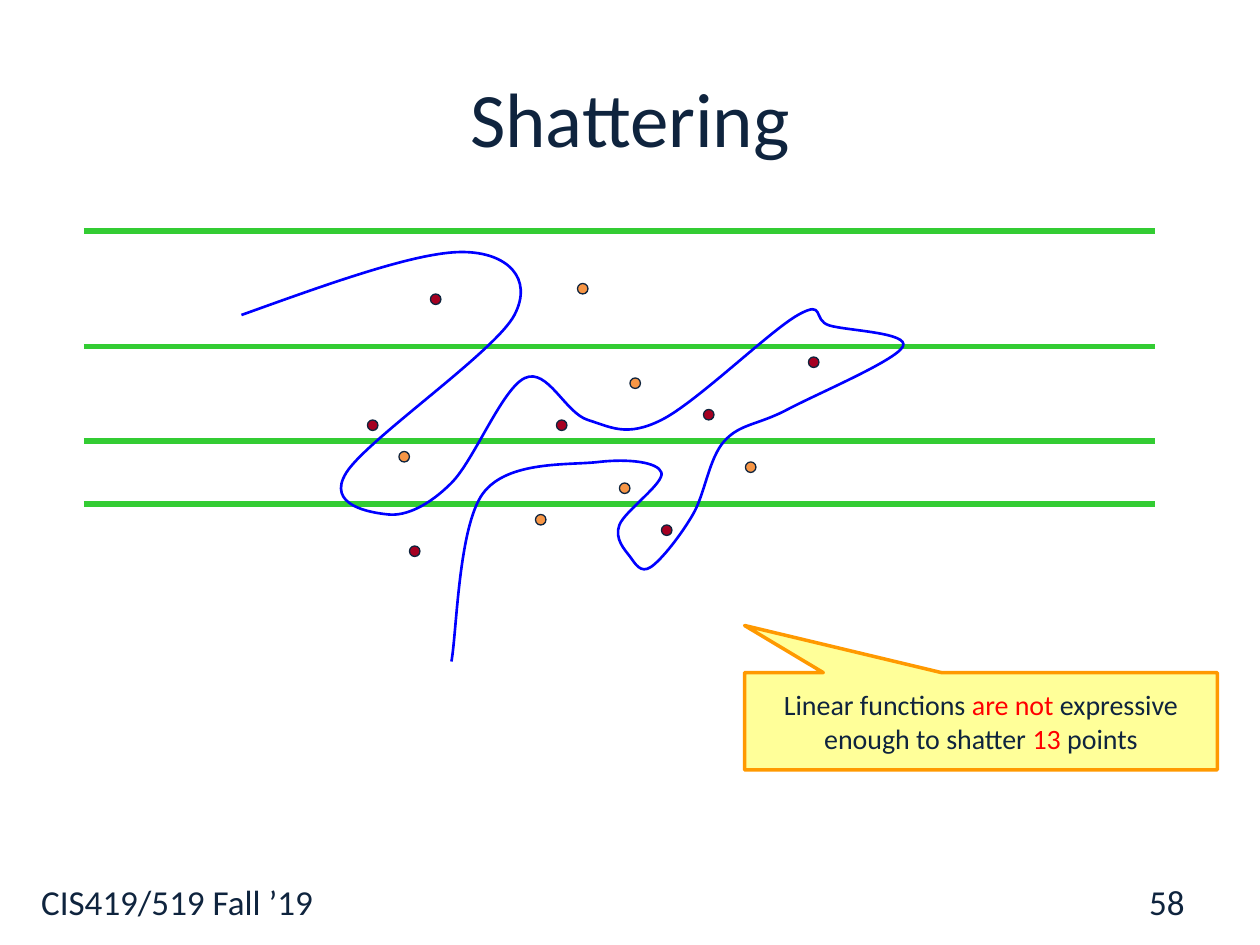
"""Build the slide on shattering thirteen points with a curve and parallel lines."""
from itertools import chain
from typing import NamedTuple

from lxml import etree
from pptx import Presentation
from pptx import util as u
from pptx.dml.color import RGBColor
from pptx.enum import shapes, text
from pptx.oxml import ns

NAVY = RGBColor(0x0F, 0x24, 0x3E)
CRIMSON = RGBColor(0xA5, 0x00, 0x21)
ORANGE = RGBColor(0xF7, 0x96, 0x46)
GREEN = RGBColor(0x33, 0xCC, 0x33)
BLUE = RGBColor(0x00, 0x00, 0xFF)
RED = RGBColor(0xFF, 0x00, 0x00)
YELLOW = RGBColor(0xFF, 0xFF, 0x99)
AMBER = RGBColor(0xFF, 0x99, 0x00)

FONT = "Calibri"
GRID_CM = 2.54 / 12


class Point(NamedTuple):
    x: float
    y: float


class Sample(NamedTuple):
    column: int
    row: int
    color: RGBColor


class Box(NamedTuple):
    left: float
    top: float
    width: float
    height: float

    def lengths(self) -> list[u.Length]:
        return [u.Cm(value) for value in self]


SAMPLES = [
    Sample(39, 52, CRIMSON), Sample(41, 28, CRIMSON), Sample(77, 34, CRIMSON),
    Sample(38, 43, ORANGE), Sample(35, 40, CRIMSON), Sample(60, 36, ORANGE),
    Sample(51, 49, ORANGE), Sample(53, 40, CRIMSON), Sample(55, 27, ORANGE),
    Sample(71, 44, ORANGE), Sample(59, 46, ORANGE), Sample(67, 39, CRIMSON),
    Sample(63, 50, CRIMSON),
]
SEPARATOR_ROWS = [48, 42, 33, 22]
SEPARATOR_ENDS = (8, 110)
CURVE_LEAD_IN = Point(-6, 42)
CURVE = [Point(*pair) for pair in [
    (23, 30), (44, 24), (49, 30), (33, 45), (37, 49), (43, 46), (50, 36), (56, 40),
    (63, 40), (76, 30), (79, 31), (86, 33), (75, 39), (69, 42), (66, 49), (62, 54),
    (60, 53), (59, 50), (63, 45), (57, 44), (46, 47), (43, 63),
]]


def grid(units: float) -> u.Length:
    return u.Cm(units * GRID_CM)


def handle(anchor: Point, toward: Point, away: Point) -> Point:
    """Return the control point that leaves the anchor along its tangent."""
    return Point(anchor.x + (toward.x - away.x) / 6, anchor.y + (toward.y - away.y) / 6)


def bezier_points(anchors: list[Point], lead_in: Point) -> list[Point]:
    """Return two handles and an end for each smooth span between anchors."""
    guides = [lead_in, *anchors, anchors[-1]]
    spans = zip(guides, guides[1:], guides[2:], guides[3:])
    return list(chain.from_iterable(
        (handle(start, end, before), handle(end, start, after), end)
        for before, start, end, after in spans
    ))


def style_line(outlined, color: RGBColor, width: float) -> None:
    outlined.line.color.rgb = color
    outlined.line.width = u.Pt(width)


def write(holder, *parts: tuple[str, RGBColor], size: float,
          align=text.PP_ALIGN.LEFT, anchor=text.MSO_ANCHOR.MIDDLE) -> None:
    """Write coloured parts as one paragraph in a shape."""
    frame = holder.text_frame
    frame.word_wrap = True
    frame.vertical_anchor = anchor
    paragraph = frame.paragraphs[0]
    paragraph.alignment = align
    for words, color in parts:
        run = paragraph.add_run()
        run.text = words
        run.font.name = FONT
        run.font.size = u.Pt(size)
        run.font.color.rgb = color


def draw_sample(slide, sample: Sample) -> None:
    dot = slide.shapes.add_shape(
        shapes.MSO_SHAPE.OVAL, grid(sample.column), grid(sample.row), grid(1), grid(1))
    dot.shadow.inherit = False
    dot.fill.solid()
    dot.fill.fore_color.rgb = sample.color
    style_line(dot, NAVY, 0.75)


def draw_separator(slide, row: int) -> None:
    start, end = SEPARATOR_ENDS
    separator = slide.shapes.add_connector(
        shapes.MSO_CONNECTOR.STRAIGHT, grid(start), grid(row), grid(end), grid(row))
    style_line(separator, GREEN, 3)
    etree.SubElement(separator._element.spPr, ns.qn("a:effectLst"))


def draw_curve(slide) -> None:
    """Draw the curve, joining each three segments into one cubic span."""
    builder = slide.shapes.build_freeform(grid(CURVE[0].x), grid(CURVE[0].y))
    builder.add_line_segments(
        [(grid(p.x), grid(p.y)) for p in bezier_points(CURVE, CURVE_LEAD_IN)], close=False)
    curve = builder.convert_to_shape()
    segments = curve._element.findall(".//" + ns.qn("a:lnTo"))
    for first, second, third in zip(segments[::3], segments[1::3], segments[2::3]):
        first.tag = ns.qn("a:cubicBezTo")
        for segment in (second, third):
            first.append(segment[0])
            segment.getparent().remove(segment)
    curve.shadow.inherit = False
    curve.fill.background()
    style_line(curve, BLUE, 1.5)


def draw_callout(slide) -> None:
    callout = slide.shapes.add_shape(
        shapes.MSO_SHAPE.RECTANGULAR_CALLOUT, *Box(15.01, 13.56, 9.53, 1.96).lengths())
    callout.adjustments[0] = -0.5
    callout.adjustments[1] = -0.985
    callout.shadow.inherit = False
    callout.fill.solid()
    callout.fill.fore_color.rgb = YELLOW
    style_line(callout, AMBER, 2)
    write(callout, ("Linear functions ", NAVY), ("are not ", RED),
          ("expressive enough to shatter ", NAVY), ("13", RED), (" points", NAVY),
          size=16, align=text.PP_ALIGN.CENTER)


def main() -> None:
    deck = Presentation()
    deck.slide_width, deck.slide_height = u.Cm(25.4), u.Cm(19.05)
    slide = deck.slides.add_slide(deck.slide_layouts[6])

    footer = slide.shapes.add_textbox(*Box(0.58, 17.63, 24.38, 1.42).lengths())
    write(footer, ("CIS419/519 Fall ’19", NAVY), size=20, anchor=text.MSO_ANCHOR.TOP)
    title = slide.shapes.add_textbox(*Box(1.27, 0.76, 22.86, 3.18).lengths())
    write(title, ("Shattering", NAVY), size=44, align=text.PP_ALIGN.CENTER)

    for sample in SAMPLES:
        draw_sample(slide, sample)
    for row in SEPARATOR_ROWS:
        draw_separator(slide, row)
    draw_curve(slide)
    draw_callout(slide)

    page_number = slide.shapes.add_textbox(*Box(18.2, 17.66, 5.93, 1.02).lengths())
    write(page_number, ("58", NAVY), size=20, align=text.PP_ALIGN.RIGHT)
    deck.save("out.pptx")


if __name__ == "__main__":
    main()
